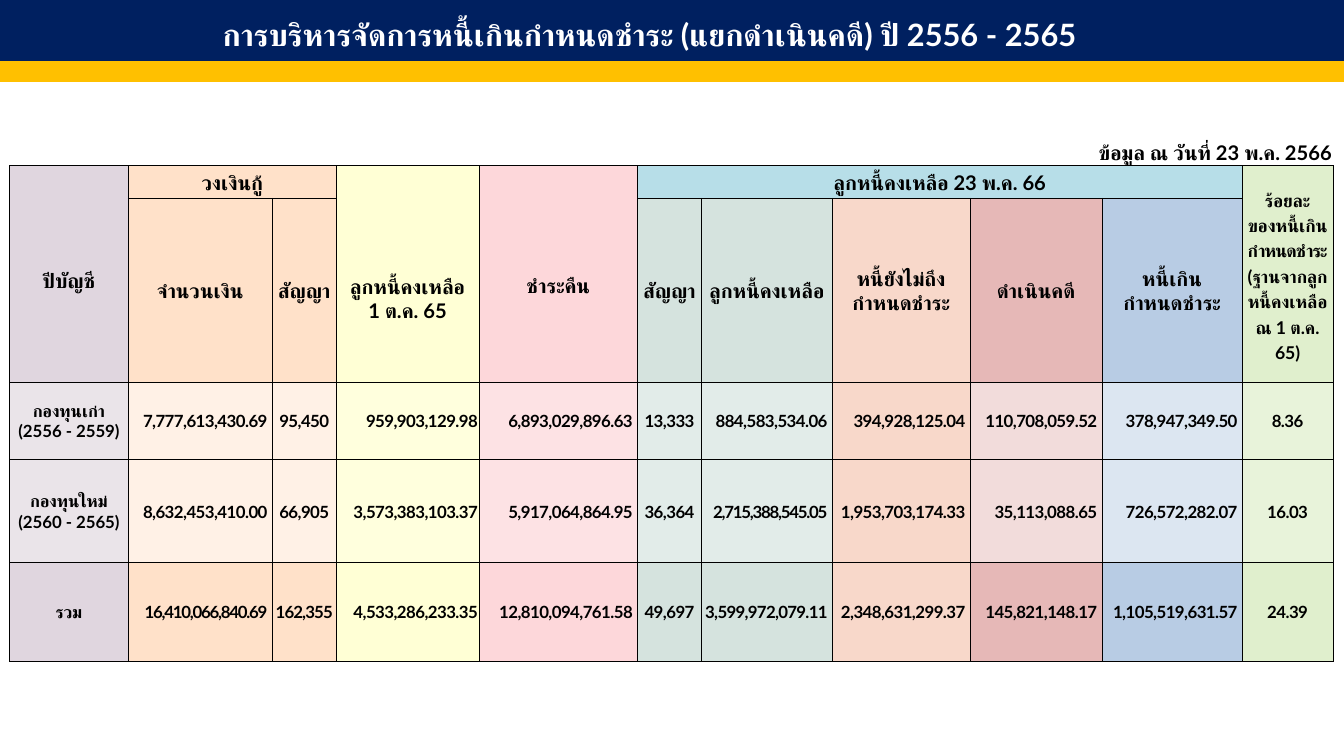
from lxml.etree import SubElement
from pptx import Presentation
from pptx.dml.color import RGBColor
from pptx.enum.shapes import MSO_SHAPE
from pptx.enum.text import MSO_ANCHOR, PP_ALIGN
from pptx.oxml.ns import qn
from pptx.util import Inches, Pt

FONT = "Lato"
C = {
    "black": "000000", "white": "FFFFFF", "navy": "002060", "gold": "FFC000", "group": "B7DEE8",
    "mauve": "E0D6DF", "mauve_light": "EAE4E9", "peach": "FFE1C9", "peach_light": "FFF1E6",
    "yellow": "FFFFD5", "yellow_light": "FFFFDD", "pink": "FDD7DA", "pink_light": "FDE2E4",
    "sage": "D5E3DE", "sage_light": "E2ECE9", "salmon": "F8D8CA", "salmon_light": "F8D8CA",
    "rose": "E6B8B7", "rose_light": "F2DCDB", "blue": "B8CCE4", "blue_light": "DCE6F1",
    "green": "E0EFCD", "green_light": "E8F3DA",
}
COL_COLORS = ["mauve", "peach", "peach", "yellow", "pink", "sage", "sage",
              "salmon", "rose", "blue", "green"]
COL_WIDTHS = [0.98, 1.19, 0.53, 1.18, 1.31, 0.53, 1.08, 1.14, 1.09, 1.16, 0.75]
ROW_HEIGHTS = [0.23, 0.27, 1.52, 0.64, 0.85, 0.82]
CENTERED_COLS = (0, 2, 5, 10)
YELLOW_COL = 3
SUBHEADS = {1: "จำนวนเงิน", 2: "สัญญา", 5: "สัญญา", 6: "ลูกหนี้คงเหลือ",
            7: "หนี้ยังไม่ถึง\nกำหนดชำระ", 8: "ดำเนินคดี", 9: "หนี้เกิน\nกำหนดชำระ"}
FUNDS = [
    ["กองทุนเก่า\n(2556 - 2559)", "7,777,613,430.69", "95,450", "959,903,129.98",
     "6,893,029,896.63", "13,333", "884,583,534.06", "394,928,125.04",
     "110,708,059.52", "378,947,349.50", "8.36"],
    ["กองทุนใหม่\n(2560 - 2565)", "8,632,453,410.00", "66,905", "3,573,383,103.37",
     "5,917,064,864.95", "36,364", "2,715,388,545.05", "1,953,703,174.33",
     "35,113,088.65", "726,572,282.07", "16.03"],
    ["รวม", "16,410,066,840.69", "162,355", "4,533,286,233.35",
     "12,810,094,761.58", "49,697", "3,599,972,079.11", "2,348,631,299.37",
     "145,821,148.17", "1,105,519,631.57", "24.39"],
]
NUMBER_SPACING = -0.3
TIGHTER = {"2,715,388,545.05": -0.7, "16,410,066,840.69": -0.7,
           "162,355": -0.5, "3,599,972,079.11": -0.4}


def rgb(name):
    return RGBColor.from_string(C[name])


def add_run(p, text, size, color="black", spacing=0):
    r = p.add_run()
    r.text = text
    r.font.name = FONT
    r.font.size = Pt(size)
    r.font.bold = True
    r.font.color.rgb = rgb(color)
    rPr = r.font._element
    SubElement(rPr, qn("a:cs")).set("typeface", FONT)
    if spacing:
        rPr.set("spc", str(round(spacing * 100)))


def add_bar(s, top, height, color):
    sp = s.shapes.add_shape(MSO_SHAPE.RECTANGLE, 0, Inches(top), Inches(11.11), Inches(height))
    sp.shadow.inherit = False
    sp.fill.solid()
    sp.fill.fore_color.rgb = rgb(color)
    sp.line.color.rgb = rgb(color)
    sp.line.width = Pt(1)


def add_title(s, text):
    tf = s.shapes.add_textbox(Inches(0.49), Inches(0.08), Inches(9.76), Inches(0.51)).text_frame
    tf.word_wrap = True
    p = tf.paragraphs[0]
    p.alignment = PP_ALIGN.CENTER
    add_run(p, text, 18.3, "white")


def set_borders(cell, visible):
    tcPr = cell._tc.get_or_add_tcPr()
    for side in "LRTB":
        ln = SubElement(tcPr, qn(f"a:ln{side}"), w=str(Pt(0.5)))
        if side in visible:
            fill = SubElement(ln, qn("a:solidFill"))
            SubElement(fill, qn("a:srgbClr"), val=C["black"])
        else:
            SubElement(ln, qn("a:noFill"))


def paint(cell, color):
    cell.fill.solid()
    cell.fill.fore_color.rgb = rgb(color)


def write(cell, text, size=12, align=PP_ALIGN.CENTER, line_spacing=None,
          right=0.01, top=0.01, spacings=None):
    cell.vertical_anchor = MSO_ANCHOR.MIDDLE
    cell.margin_left, cell.margin_right = Inches(0.01), Inches(right)
    cell.margin_top, cell.margin_bottom = Inches(top), 0
    p = cell.text_frame.paragraphs[0]
    p.alignment = align
    if line_spacing:
        p.line_spacing = line_spacing
    for i, line in enumerate(text.split("\n")):
        if i:
            p.add_line_break()
        add_run(p, line, size, spacing=(spacings or {}).get(line, 0))


def add_grid(s):
    frame = s.shapes.add_table(len(ROW_HEIGHTS), len(COL_WIDTHS), Inches(0.08), Inches(1.14),
                               Inches(sum(COL_WIDTHS)), Inches(sum(ROW_HEIGHTS)))
    table = frame.table
    table.first_row = table.horz_banding = False
    for col, width in zip(table.columns, COL_WIDTHS):
        col.width = Inches(width)
    for row, height in zip(table.rows, ROW_HEIGHTS):
        row.height = Inches(height)
    for r in range(len(ROW_HEIGHTS)):
        for c, color in enumerate(COL_COLORS):
            cell = table.cell(r, c)
            set_borders(cell, "LRTB" if r else "B")
            if r:
                paint(cell, color + "_light" if r in (3, 4) else color)
            else:
                cell.fill.background()
    return table


def fill_headings(table):
    last = len(COL_WIDTHS) - 1
    table.cell(0, 0).merge(table.cell(0, last))
    write(table.cell(0, 0), "ข้อมูล ณ วันที่ 23 พ.ค. 2566", align=PP_ALIGN.RIGHT)
    for first, end in ((1, 2), (5, 9)):
        table.cell(1, first).merge(table.cell(1, end))
    for c in (0, 3, 4, last):
        table.cell(1, c).merge(table.cell(2, c))
    for c in range(5, 10):
        paint(table.cell(1, c), "group")
    write(table.cell(1, 0), "ปีบัญชี", line_spacing=1.5)
    write(table.cell(1, 1), "วงเงินกู้")
    write(table.cell(1, 3), "ลูกหนี้คงเหลือ\n1 ต.ค. 65", top=0.41)
    write(table.cell(1, 4), "ชำระคืน", top=0.2)
    write(table.cell(1, 5), "ลูกหนี้คงเหลือ 23 พ.ค. 66")
    write(table.cell(1, last),
          "ร้อยละ\nของหนี้เกิน\nกำหนดชำระ\n(ฐานจากลูกหนี้คงเหลือ ณ 1 ต.ค. 65)",
          10.5, line_spacing=1.2, spacings={"กำหนดชำระ": -0.5})
    for c, text in SUBHEADS.items():
        write(table.cell(2, c), text)


def fill_funds(table):
    for r, fund in enumerate(FUNDS, 3):
        for c, text in enumerate(fund):
            centered = c in CENTERED_COLS
            spacing = TIGHTER.get(text, NUMBER_SPACING) if c else 0
            write(table.cell(r, c), text, 10,
                  PP_ALIGN.CENTER if centered else PP_ALIGN.RIGHT,
                  right=0.01 if centered or c == YELLOW_COL else 0.04,
                  spacings={text: spacing})


def main():
    prs = Presentation()
    prs.slide_width, prs.slide_height = Inches(11.11), Inches(6.25)
    s = prs.slides.add_slide(prs.slide_layouts[6])
    table = add_grid(s)
    fill_headings(table)
    fill_funds(table)
    add_bar(s, 0, 0.51, "navy")
    add_bar(s, 0.51, 0.16, "gold")
    add_title(s, "การบริหารจัดการหนี้เกินกำหนดชำระ (แยกดำเนินคดี) ปี 2556 - 2565")
    prs.save("out.pptx")


if __name__ == "__main__":
    main()
